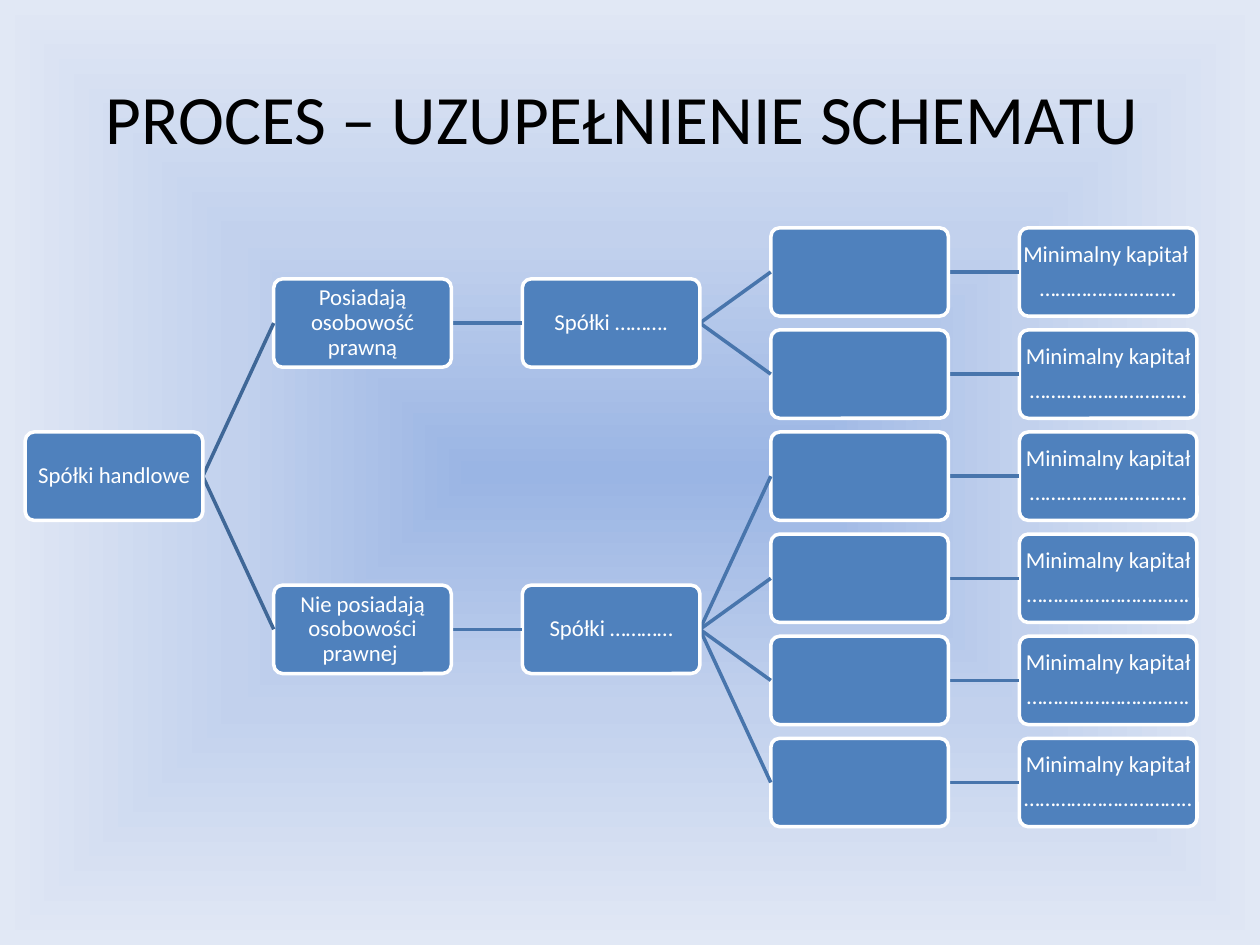
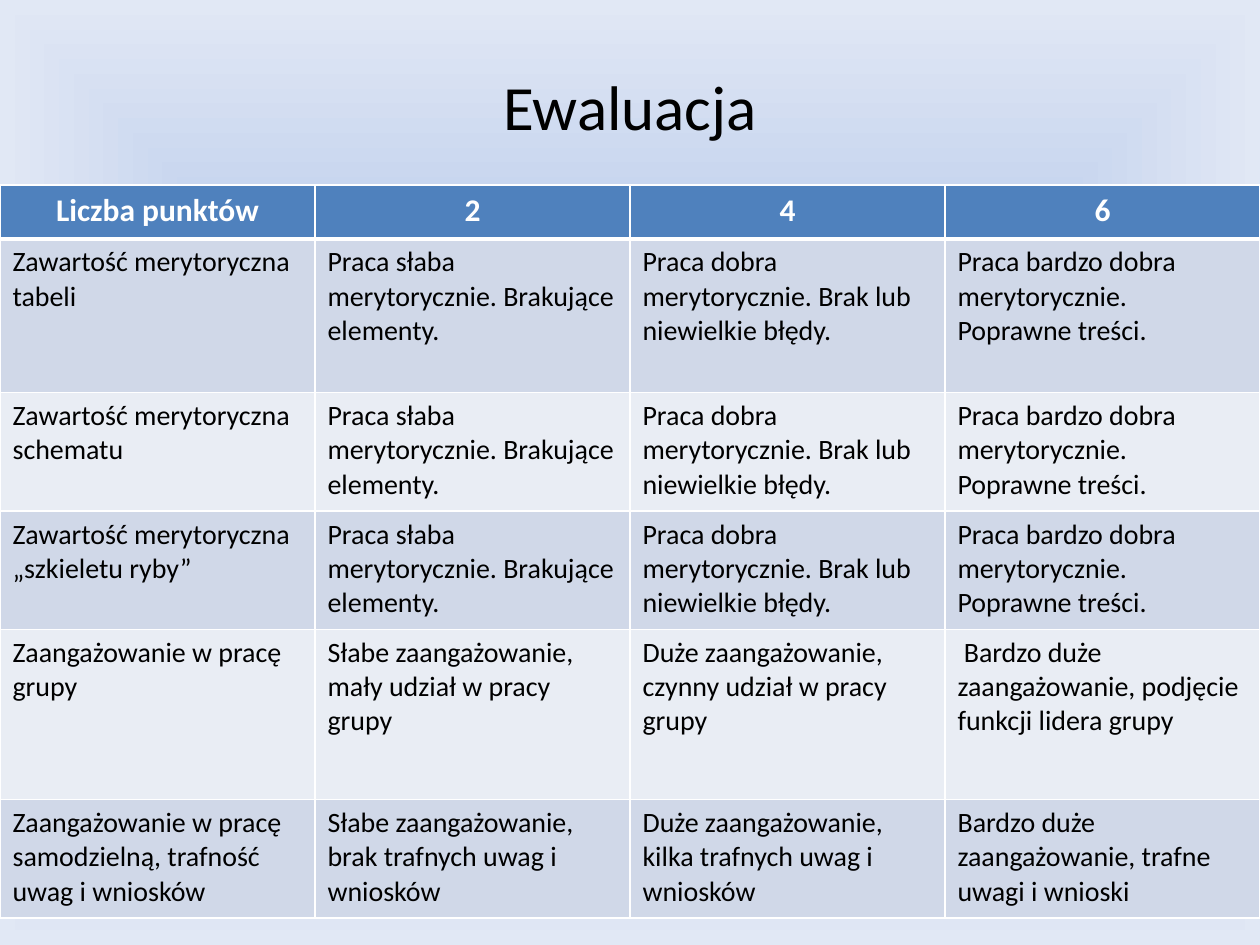
from lxml import etree
from pptx import Presentation
from pptx.dml import color
from pptx.enum import shapes, text
from pptx.oxml import ns
from pptx.util import Pt

FONT = "Calibri"
COLORS = {
    "ink": "000000", "white": "FFFFFF", "accent": "4F81BD",
    "root_link": "3F6797", "link": "4875AC",
    "band_dark": "D0D8E8", "band_light": "E9EDF4",
    "bg_center": "9AB5E4", "bg_middle": "C2D1ED", "bg_edge": "E1E8F5",
}
SLIDE_W, SLIDE_H = 720, 540

# A node is (paragraphs, children)
CAPITAL = "Minimalny kapitał"


def company(*capital):
    """An empty box to fill in, followed by its minimum capital."""
    return [], [(list(capital), [])]


COMPANY_TREE = (["Spółki handlowe"], [
    (["Posiadają osobowość prawną"], [
        (["Spółki ………."], [
            company(CAPITAL + " ", "…………………….."),
            company(CAPITAL, "…………………………"),
        ])]),
    (["Nie posiadają osobowości prawnej "], [
        (["Spółki …………"], [
            company(CAPITAL, "…………………………"),
            company(CAPITAL, "…………………………."),
            company(CAPITAL, "…………………………."),
            company(CAPITAL, "………………………….."),
        ])]),
])

CONTENT_GRADES = (
    "Praca słaba merytorycznie. Brakujące elementy.",
    "Praca dobra merytorycznie. Brak lub niewielkie błędy.",
    "Praca bardzo dobra merytorycznie. Poprawne treści.",
)
# (row height, cells)
EVALUATION = [
    (31, ("Liczba punktów", "2", "4", "6")),
    (87.8, ("Zawartość merytoryczna tabeli", *CONTENT_GRADES)),
    (67.7, ("Zawartość merytoryczna schematu", *CONTENT_GRADES)),
    (67.7, ("Zawartość merytoryczna „szkieletu ryby”", *CONTENT_GRADES)),
    (97.2, ("Zaangażowanie w pracę grupy",
            "Słabe zaangażowanie, mały udział w pracy grupy",
            "Duże zaangażowanie, czynny udział w pracy grupy",
            " Bardzo duże zaangażowanie, podjęcie funkcji lidera grupy")),
    (67.7, ("Zaangażowanie w pracę samodzielną, trafność uwag i wniosków",
            "Słabe zaangażowanie, brak trafnych uwag i wniosków",
            "Duże zaangażowanie, kilka trafnych uwag i wniosków",
            "Bardzo duże zaangażowanie, trafne uwagi i wnioski")),
]


def rgb(name):
    return color.RGBColor.from_string(COLORS[name])


def child(parent, tag, **attrs):
    return etree.SubElement(parent, ns.qn(tag), attrs)


def style(p, size, ink, align=text.PP_ALIGN.CENTER, bold=False):
    p.alignment = align
    for r in p.runs:
        r.font.name = FONT
        r.font.size = Pt(size)
        r.font.bold = bold
        r.font.color.rgb = rgb(ink)


def add_slide(prs):
    """Blank slide with the shared gradient that spreads from the centre."""
    s = prs.slides.add_slide(prs.slide_layouts[6])
    fill = s.background.fill
    fill.gradient()
    grad = s.background._cSld.find(".//" + ns.qn("a:gradFill"))
    for part in list(grad):
        grad.remove(part)
    stops = child(grad, "a:gsLst")
    for pos, name in ((0, "bg_center"), (50, "bg_middle"), (100, "bg_edge")):
        stop = child(stops, "a:gs", pos=str(pos * 1000))
        child(stop, "a:srgbClr", val=COLORS[name])
    spread = child(grad, "a:path", path="shape")
    child(spread, "a:fillToRect", **dict.fromkeys("ltrb", "50000"))
    return s


def add_title(s, box, title, size):
    sp = s.shapes.add_textbox(*map(Pt, box))
    tf = sp.text_frame
    tf.word_wrap = True
    tf.vertical_anchor = text.MSO_ANCHOR.MIDDLE
    tf.text = title
    style(tf.paragraphs[0], size, "ink")


def add_node(s, box, lines):
    sp = s.shapes.add_shape(shapes.MSO_SHAPE.ROUNDED_RECTANGLE, *map(Pt, box))
    sp.adjustments[0] = 0.1
    sp.shadow.inherit = False
    sp.fill.solid()
    sp.fill.fore_color.rgb = rgb("accent")
    sp.line.color.rgb = rgb("white")
    sp.line.width = Pt(2)
    if not lines:
        return
    tf = sp.text_frame
    tf.word_wrap = True
    tf.vertical_anchor = text.MSO_ANCHOR.MIDDLE
    tf.margin_left = tf.margin_right = tf.margin_top = tf.margin_bottom = Pt(0.7)
    tf.text = "\n".join(lines)
    for p in tf.paragraphs:
        style(p, 13, "white")
        p.line_spacing = 0.9
        p.space_after = Pt(5.5)


def add_link(s, start, end, ink):
    link = s.shapes.add_connector(shapes.MSO_CONNECTOR.STRAIGHT,
                                  *map(Pt, (*start, *end)))
    link.line.color.rgb = rgb(ink)
    link.line.width = Pt(2)
    child(link._element.spPr, "a:effectLst")


def count_leaves(node):
    return sum(map(count_leaves, node[1])) or 1


def count_levels(node):
    return 1 + max(map(count_levels, node[1]), default=0)


def add_tree(s, box, tree):
    """Lay the tree out left to right; a parent is centred on its children."""
    left, top, width, height = box
    node_w, node_h = 101.5, 50.5
    col_step = (width - node_w) / (count_levels(tree) - 1)
    row_step = (height - node_h) / (count_leaves(tree) - 1)

    def place(node, level, first_row):
        """Draw a branch and return the vertical middle of its first node."""
        lines, children = node
        x = left + level * col_step
        middles, row = [], first_row
        for branch in children:
            middles.append(place(branch, level + 1, row))
            row += count_leaves(branch)
        if middles:
            middle = (middles[0] + middles[-1]) / 2
        else:
            middle = top + first_row * row_step + node_h / 2
        for end in middles:
            add_link(s, (x + node_w, middle), (x + col_step, end),
                     "link" if level else "root_link")
        add_node(s, (x, middle - node_h / 2, node_w, node_h), lines)
        return middle

    place(tree, 0, 0)


def set_borders(cell, widths):
    """Put white lines on the sides named in widths, ahead of the fill."""
    tc_pr = cell._tc.get_or_add_tcPr()
    for i, (side, width) in enumerate(widths.items()):
        ln = etree.Element(ns.qn("a:ln" + side), w=str(Pt(width)))
        child(child(ln, "a:solidFill"), "a:srgbClr", val=COLORS["white"])
        tc_pr.insert(i, ln)


def add_evaluation_table(s, box, rows):
    n_cols = len(rows[0][1])
    table = s.shapes.add_table(len(rows), n_cols, *map(Pt, box)).table
    for col in table.columns:
        col.width = Pt(box[2] / n_cols)
    for i, (height, words) in enumerate(rows):
        table.rows[i].height = Pt(height)
        header = i == 0
        fill = "accent" if header else ("band_light", "band_dark")[i % 2]
        borders = {"L": 1, "R": 1, "T": 3 if i == 1 else 1, "B": 3 if header else 1}
        for cell, word in zip(table.rows[i].cells, words):
            cell.text = word
            cell.fill.solid()
            cell.fill.fore_color.rgb = rgb(fill)
            set_borders(cell, borders)
            p = cell.text_frame.paragraphs[0]
            if header:
                style(p, 18, "white", bold=True)
            else:
                style(p, 16, "ink", text.PP_ALIGN.LEFT)


def process_slide(prs):
    s = add_slide(prs)
    add_title(s, (36, 21.6, 648, 90), "PROCES – UZUPEŁNIENIE SCHEMATU ", 39.6)
    add_tree(s, (14.4, 130.2, 669.6, 342.2), COMPANY_TREE)


def evaluation_slide(prs):
    s = add_slide(prs)
    add_title(s, (36, 9.4, 648, 102), "Ewaluacja", 36)
    height = sum(row[0] for row in EVALUATION)
    add_evaluation_table(s, (0, 105.6, SLIDE_W, height), EVALUATION)


def main():
    prs = Presentation()
    prs.slide_width, prs.slide_height = Pt(SLIDE_W), Pt(SLIDE_H)
    process_slide(prs)
    evaluation_slide(prs)
    prs.save("out.pptx")


if __name__ == "__main__":
    main()
